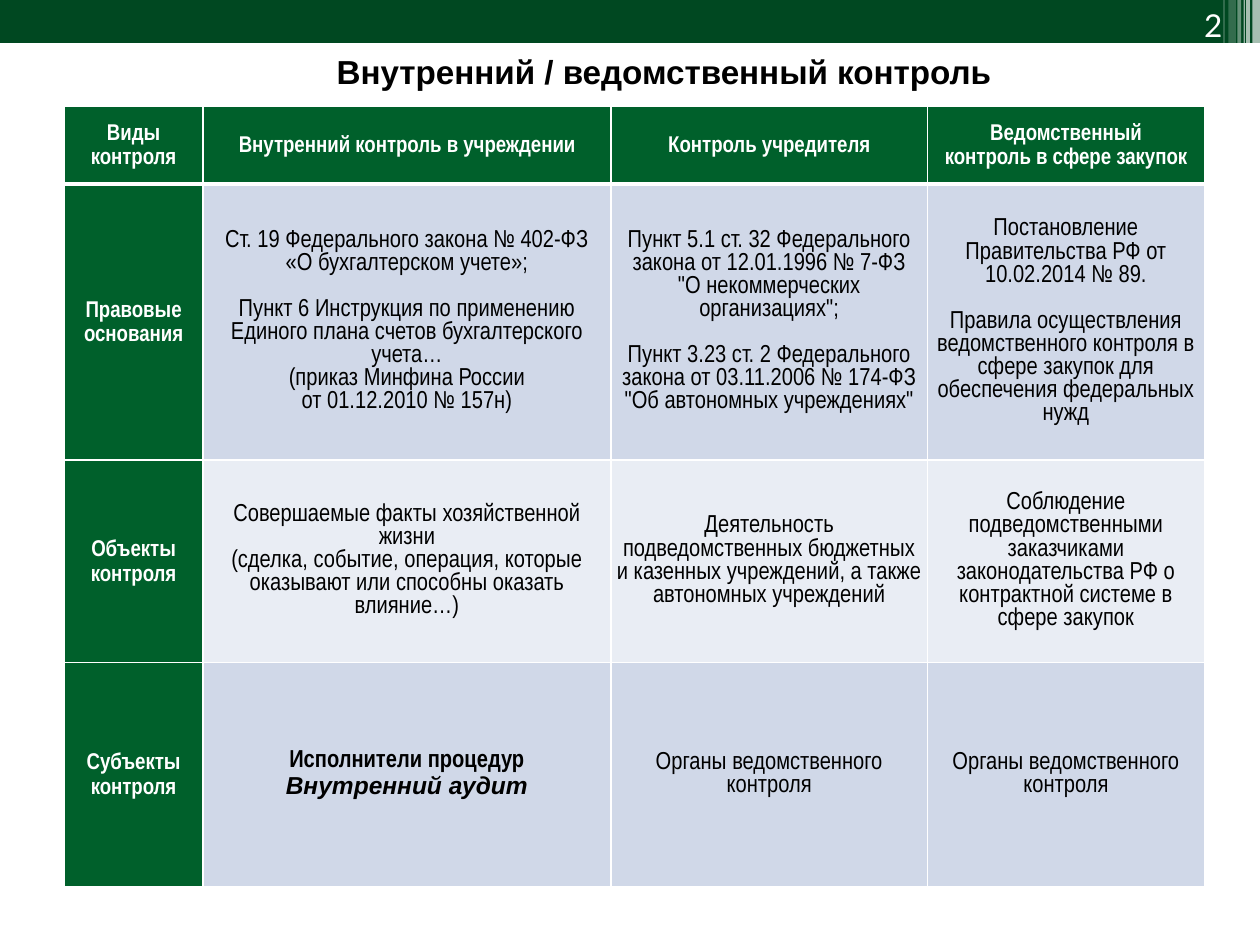
from lxml import etree
from pptx import Presentation
from pptx import util as u
from pptx.dml import color as clr
from pptx.enum import shapes, text
from pptx.oxml import ns

GREEN, DARK, WHITE, BLACK = "00602B", "004821", "FFFFFF", "000000"
BANDS = ["D0D8E8", "E9EDF4"]
COLS = [1.1, 3.24, 2.51, 2.2]
ROWS = [0.62, 2.19, 1.61, 1.78]
STRIPES = [
    (9.94, 0.06, 0.34, 65), (9.89, 0.03, 0.34, 65), (9.87, 0.01, 0.34, 60),
    (9.82, 0.03, 0.34, 40), (9.75, 0.06, 0.36, 20), (9.71, 0.01, 0.36, 30),
]
CELLS = [
    ["Виды контроля", "Внутренний контроль в учреждении", "Контроль учредителя",
     "Ведомственный\nконтроль в сфере закупок"],
    ["Правовые основания",
     "Ст. 19 Федерального закона № 402-ФЗ\v«О бухгалтерском учете»;\n\n"
     "Пункт 6 Инструкция по применению Единого плана счетов бухгалтерского учета…\n"
     "(приказ Минфина России\nот 01.12.2010 № 157н)",
     "Пункт 5.1 ст. 32 Федерального закона от 12.01.1996 № 7-ФЗ\v"
     "\"О некоммерческих организациях\";\n\n"
     "Пункт 3.23 ст. 2 Федерального закона от 03.11.2006 № 174-ФЗ\v"
     "\"Об автономных учреждениях\"",
     "Постановление Правительства РФ от 10.02.2014 № 89.\n\n"
     "Правила осуществления ведомственного контроля в сфере закупок "
     "для обеспечения федеральных нужд"],
    ["Объекты контроля",
     "Совершаемые факты хозяйственной жизни\n"
     "(сделка, событие, операция, которые оказывают или способны оказать влияние…)",
     "Деятельность подведомственных бюджетных и казенных учреждений, "
     "а также автономных учреждений",
     "Соблюдение подведомственными заказчиками законодательства РФ "
     "о контрактной системе в сфере закупок"],
    ["Субъекты контроля", "Исполнители процедур\nВнутренний аудит",
     "Органы ведомственного контроля", "Органы ведомственного контроля"],
]


def rgb(code):
    """Turn a hex string into a colour."""
    return clr.RGBColor.from_string(code)


class Deck:
    """Hold the style and the current slide."""

    font, body, head = "Arial Narrow", 14, 13

    def __init__(self):
        """Start a deck with one blank slide."""
        self.prs = Presentation()
        self.prs.slide_width, self.prs.slide_height = u.Inches(10), u.Inches(7.5)
        self.slide = self.prs.slides.add_slide(self.prs.slide_layouts[6])

    def bar(self, box, fill, alpha=100):
        """Draw a plain rectangle with an opacity in percent."""
        shape = self.slide.shapes.add_shape(
            shapes.MSO_SHAPE.RECTANGLE, *map(u.Inches, box))
        shape.shadow.inherit = False
        shape.line.fill.background()
        shape.fill.solid()
        shape.fill.fore_color.rgb = rgb(fill)
        if alpha < 100:
            tint = shape._element.spPr.find(".//" + ns.qn("a:srgbClr"))
            etree.SubElement(tint, ns.qn("a:alpha"), val=str(alpha * 1000))

    def style(self, para, size, color, bold=False, font=None, align="CENTER"):
        """Set the look of a paragraph."""
        para.alignment = text.PP_ALIGN[align]
        para.font.name, para.font.size = font or self.font, u.Pt(size)
        para.font.bold, para.font.color.rgb = bold, rgb(color)

    def label(self, box, words, size, color, **look):
        """Place a one-line text box."""
        frame = self.slide.shapes.add_textbox(*map(u.Inches, box)).text_frame
        frame.word_wrap = True
        para = frame.paragraphs[0]
        para.text = words
        self.style(para, size, color, **look)

    def edge(self, cell, **widths):
        """Set white cell borders in points."""
        props = cell._tc.get_or_add_tcPr()
        for side in "LRTB":
            line = etree.SubElement(
                props, ns.qn("a:ln" + side), w=str(u.Pt(widths.get(side, 1))))
            fill = etree.SubElement(line, ns.qn("a:solidFill"))
            etree.SubElement(fill, ns.qn("a:srgbClr"), val=WHITE)

    def prose(self, cell, words, head):
        """Fill a cell with paragraphs, with a gap before each new block."""
        cell.vertical_anchor = text.MSO_ANCHOR.MIDDLE
        cell.margin_left = cell.margin_right = u.Inches(0.04)
        cell.margin_top = cell.margin_bottom = 0
        frame = cell.text_frame
        para = None
        for block in words.split("\n\n"):
            for i, line in enumerate(block.split("\n")):
                gap = para is not None and i == 0
                para = frame.paragraphs[0] if para is None else frame.add_paragraph()
                para.text = line
                if gap:
                    para.space_before = u.Pt(13)
                if head:
                    para.line_spacing = 1.15
                    self.style(para, self.head, WHITE, True)
                else:
                    self.style(para, self.body, BLACK)

    def table(self, left, top, cols, rows, cells):
        """Build a table with a green top row and first column."""
        grid = self.slide.shapes.add_table(
            len(rows), len(cols),
            *map(u.Inches, (left, top, sum(cols), sum(rows)))).table
        for col, width in zip(grid.columns, cols):
            col.width = u.Inches(width)
        for r, line in enumerate(cells):
            grid.rows[r].height = u.Inches(rows[r])
            for c, words in enumerate(line):
                cell, head = grid.cell(r, c), r == 0 or c == 0
                self.edge(cell, T=3 if r == 1 else 1, B=3 if r == 0 else 1)
                cell.fill.solid()
                cell.fill.fore_color.rgb = rgb(GREEN if head else BANDS[(r - 1) % 2])
                self.prose(cell, words, head)
        return grid


def main():
    """Build the slide and save it."""
    deck = Deck()
    deck.bar((0, 0, 10, 0.34), DARK)
    for left, width, height, alpha in STRIPES:
        deck.bar((left, 0, width, height), WHITE, alpha)
    deck.label((8.9, 0, 0.9, 0.37), "2", 18, WHITE, font="Lato", align="RIGHT")
    grid = deck.table(0.51, 0.84, COLS, ROWS, CELLS)
    staff, audit = grid.cell(3, 1).text_frame.paragraphs
    staff.font.bold = audit.font.bold = audit.font.italic = True
    audit.font.name = "Arial"
    deck.label((0.2, 0.36, 10.14, 0.42), "Внутренний / ведомственный контроль",
               19, BLACK, bold=True, font="Arial")
    deck.prs.save("out.pptx")


if __name__ == "__main__":
    main()
